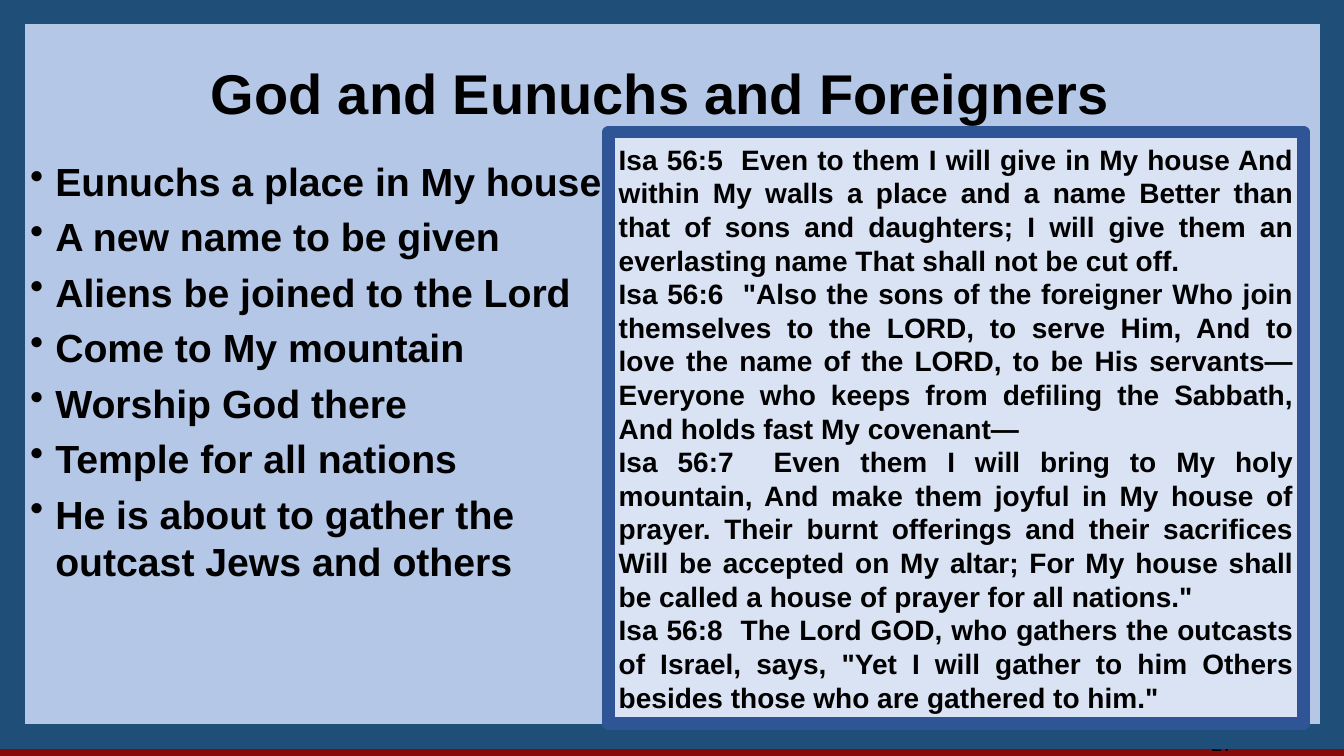
from dataclasses import dataclass

from lxml import etree
from pptx import Presentation
from pptx import util as u
from pptx.dml.color import RGBColor
from pptx.enum import shapes, text
from pptx.oxml.ns import qn

WIDE, HIGH = u.Inches(13.33), u.Inches(7.5)
COL, ROW = WIDE / 100, HIGH / 100  # grid of 100 columns by 100 rows
INK = {"back": "860A0A", "panel": "B4C7E7", "frame": "1F4E79",
       "card": "DAE3F3", "edge": "2F5597", "text": "000000"}
ALIGN = text.PP_ALIGN
ANCHOR = text.MSO_ANCHOR
FIT = text.MSO_AUTO_SIZE


@dataclass
class Area:
    """Place on the grid, in columns and rows."""
    col: float
    row: float
    cols: float
    rows: float

    def spot(self) -> list[u.Emu]:
        return [u.Emu(round(n)) for n in (self.col * COL, self.row * ROW,
                                          self.cols * COL, self.rows * ROW)]


@dataclass
class Panel:
    area: Area
    fill: str
    line: str
    width: float
    join: str


@dataclass
class Style:
    size: float
    align: ALIGN
    anchor: ANCHOR
    after: float = 0
    bold: bool = True
    fit: FIT = FIT.NONE
    bullet: bool = False


TITLE = "God and Eunuchs and Foreigners"
POINTS = [
    "Eunuchs a place in My house",
    "A new name to be given",
    "Aliens be joined to the Lord",
    "Come to My mountain",
    "Worship God there",
    "Temple for all nations",
    "He is about to gather the outcast Jews and others",
]
VERSES = [
    "Isa 56:5  Even to them I will give in My house And within My walls a place and a name "
    "Better than that of sons and daughters; I will give them an everlasting name "
    "That shall not be cut off. ",
    "Isa 56:6  \"Also the sons of the foreigner Who join themselves to the LORD, to serve Him, "
    "And to love the name of the LORD, to be His servants—Everyone who keeps from defiling "
    "the Sabbath, And holds fast My covenant— ",
    "Isa 56:7  Even them I will bring to My holy mountain, And make them joyful in My house "
    "of prayer. Their burnt offerings and their sacrifices Will be accepted on My altar; "
    "For My house shall be called a house of prayer for all nations.\" ",
    "Isa 56:8  The Lord GOD, who gathers the outcasts of Israel, says, \"Yet I will gather "
    "to him Others besides those who are gathered to him.\" ",
]

FRAME = Panel(Area(0.9, 1.47, 98.25, 96), "panel", "frame", 18, "miter")
CARD = Panel(Area(45.3, 17.47, 51.68, 78.27), "card", "edge", 9, "round")
HEAD = Style(40, ALIGN.CENTER, ANCHOR.TOP, after=5, fit=FIT.SHAPE_TO_FIT_TEXT)
LIST = Style(28, ALIGN.LEFT, ANCHOR.TOP, after=6, fit=FIT.SHAPE_TO_FIT_TEXT, bullet=True)
VERSE = Style(20, ALIGN.JUSTIFY, ANCHOR.MIDDLE)
PAGE = Style(14, ALIGN.RIGHT, ANCHOR.MIDDLE, bold=False)


def tint(name: str) -> RGBColor:
    return RGBColor.from_string(INK[name])


def apply(item, **form) -> None:
    for key, value in form.items():
        setattr(item, key, value)


def add_dot(para) -> None:
    """Give a paragraph a hanging round bullet."""
    props = para._p.get_or_add_pPr()
    props.set("marL", str(u.Inches(0.25)))
    props.set("indent", str(-u.Inches(0.25)))
    color = etree.SubElement(props, qn("a:buClr"))
    etree.SubElement(color, qn("a:srgbClr"), val=INK["text"])
    etree.SubElement(props, qn("a:buChar"), char="•")
    tabs = etree.SubElement(props, qn("a:tabLst"))
    etree.SubElement(tabs, qn("a:tab"), pos=str(u.Inches(0.12)), algn="l")


def write(shape, lines: list[str], style: Style) -> None:
    frame = shape.text_frame
    apply(frame, word_wrap=True, auto_size=style.fit, vertical_anchor=style.anchor,
          margin_left=u.Inches(0.1), margin_right=u.Inches(0.1),
          margin_top=u.Inches(0.05), margin_bottom=u.Inches(0.05))
    for i, line in enumerate(lines):
        para = frame.paragraphs[0] if i == 0 else frame.add_paragraph()
        if style.bullet:
            add_dot(para)
        apply(para, alignment=style.align, space_before=u.Pt(0),
              space_after=u.Pt(style.after), line_spacing=1.0)
        run = para.add_run()
        run.text = line
        apply(run.font, name="Arial", size=u.Pt(style.size), bold=style.bold)
        run.font.color.rgb = tint("text")


def add_panel(slide, panel: Panel):
    shape = slide.shapes.add_shape(shapes.MSO_SHAPE.RECTANGLE, *panel.area.spot())
    shape.shadow.inherit = False
    shape.fill.solid()
    shape.fill.fore_color.rgb = tint(panel.fill)
    shape.line.color.rgb = tint(panel.line)
    shape.line.width = u.Pt(panel.width)
    join = etree.SubElement(shape.line._get_or_add_ln(), qn("a:" + panel.join))
    if panel.join == "miter":
        join.set("lim", "800000")
    return shape


def add_text(slide, area: Area, lines: list[str], style: Style) -> None:
    write(slide.shapes.add_textbox(*area.spot()), lines, style)


def main() -> None:
    deck = Presentation()
    apply(deck, slide_width=WIDE, slide_height=HIGH)
    slide = deck.slides.add_slide(deck.slide_layouts[5])
    slide.background.fill.solid()
    slide.background.fill.fore_color.rgb = tint("back")

    # Page number, partly behind the frame
    add_text(slide, Area(70, 95.73, 22.5, 5.33), ["27"], PAGE)

    # Framed panel and scripture card
    add_panel(slide, FRAME)
    write(add_panel(slide, CARD), VERSES, VERSE)

    # Bullet points
    add_text(slide, Area(1.5, 20.13, 45.6, 58.4), POINTS, LIST)

    # Title, brought to the front
    title = slide.shapes.title
    spot = Area(1.28, 7.07, 95.63, 10.27).spot()
    apply(title, **dict(zip(("left", "top", "width", "height"), spot)))
    write(title, [TITLE], HEAD)
    slide.shapes._spTree.append(title._element)

    deck.save("out.pptx")


if __name__ == "__main__":
    main()
